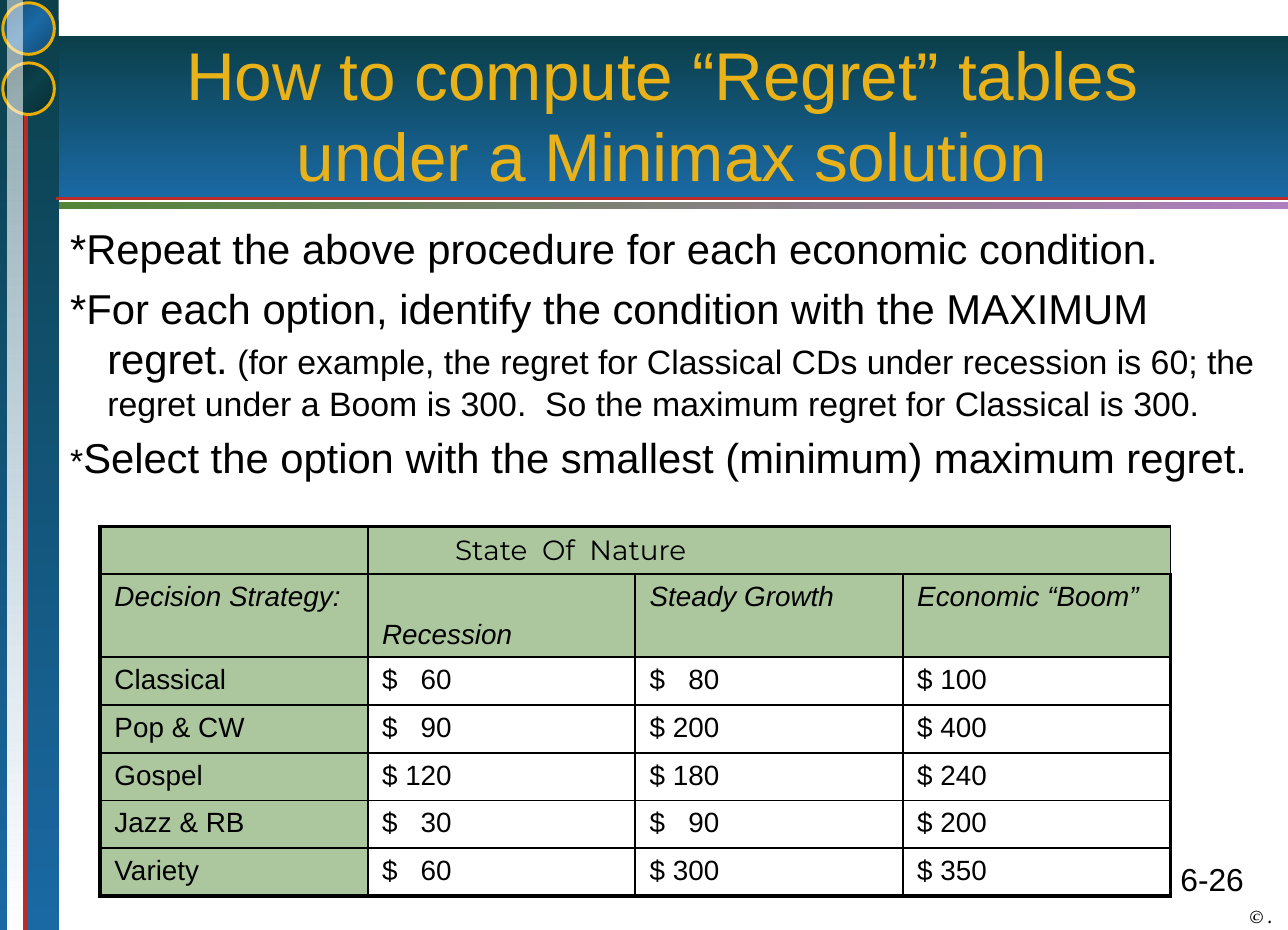
import pptx
import pptx.dml.color
import pptx.enum.shapes
import pptx.enum.text
import pptx.oxml
import pptx.oxml.ns
import pptx.util
from pptx.dml.color import RGBColor
from pptx.util import Inches

BLACK = RGBColor(0x00, 0x00, 0x00)
WHITE = RGBColor(0xFF, 0xFF, 0xFF)
TEAL = RGBColor(0x0B, 0x3F, 0x49)
DARK_TEAL = RGBColor(0x08, 0x2D, 0x34)
BLUE = RGBColor(0x1A, 0x69, 0xA4)
DARK_BLUE = RGBColor(0x13, 0x4B, 0x75)
GREEN = RGBColor(0x53, 0x84, 0x38)
PURPLE = RGBColor(0xAF, 0x7E, 0xBE)
GOLD = RGBColor(0xE8, 0xAD, 0x06)
TITLE_GOLD = RGBColor(0xE8, 0xB2, 0x18)
RED = RGBColor(0xBB, 0x2C, 0x29)
PALE_GREEN = RGBColor(0xAC, 0xC7, 0x9E)

NAMESPACE = pptx.oxml.ns.nsdecls("a")
PRESET = pptx.enum.shapes.MSO_SHAPE
ALIGN = pptx.enum.text.PP_ALIGN
ANCHOR = pptx.enum.text.MSO_ANCHOR

deck = pptx.Presentation()
deck.slide_width, deck.slide_height = Inches(9), Inches(6.5)
page = deck.slides.add_slide(deck.slide_layouts[6])


def add_gradient_shape(preset, place, colors, angle, first_alpha=100):
    """Add a shape whose gradient has evenly spaced stops; angle runs clockwise."""
    shape = page.shapes.add_shape(preset, *[Inches(value) for value in place])
    shape.shadow.inherit = False
    shape.line.fill.background()
    stops = ""
    for index, color in enumerate(colors):
        position = index * 100000 // (len(colors) - 1)
        alpha = 100 if index else first_alpha
        stops += (f'<a:gs pos="{position}"><a:srgbClr val="{color}">'
                  f'<a:alpha val="{alpha * 1000}"/></a:srgbClr></a:gs>')
    gradient = pptx.oxml.parse_xml(
        f'<a:gradFill {NAMESPACE} rotWithShape="1"><a:gsLst>{stops}</a:gsLst>'
        f'<a:lin ang="{angle * 60000}" scaled="0"/></a:gradFill>')
    shape._element.spPr.find(pptx.oxml.ns.qn("a:prstGeom")).addnext(gradient)
    return shape


def add_text(place, paragraphs, frame_format, paragraph_format, font_format):
    """Add a text box; each paragraph is a list of (text, point size) spans."""
    box = page.shapes.add_textbox(*[Inches(value) for value in place])
    for name, value in frame_format.items():
        setattr(box.text_frame, name, value)
    for index, spans in enumerate(paragraphs):
        para = box.text_frame.add_paragraph() if index else box.text_frame.paragraphs[0]
        for name, value in paragraph_format.items():
            setattr(para, name, value)
        for position, (text, size) in enumerate(spans):
            for part, line in enumerate(text.split("\n")):
                if part:
                    para.add_line_break()
                span = para.add_run()
                span.text = line
                span.font.size = pptx.util.Pt(size)
                for name, value in font_format.items():
                    if name == "color":
                        span.font.color.rgb = value
                    else:
                        setattr(span.font, name, value)
    return box


# Title band, rules and side bar
add_gradient_shape(PRESET.RECTANGLE, (0, 0.25, 9, 1.13), (TEAL, BLUE), 90)
add_gradient_shape(PRESET.RECTANGLE, (0.39, 1.41, 8.61, 0.05), (GREEN, PURPLE), 0)
add_gradient_shape(PRESET.RECTANGLE, (0, 0, 0.41, 6.5), (TEAL, BLUE), 90)
for start, end, width in [((0.39, 1.39), (9, 1.39), 1.5),
                          ((0.18, 0.79), (0.18, 6.5), 2.25)]:
    rule = page.shapes.add_connector(
        pptx.enum.shapes.MSO_CONNECTOR.STRAIGHT,
        *[Inches(value) for value in start + end])
    rule.line.color.rgb = RED
    rule.line.width = pptx.util.Pt(width)
    rule._element.spPr.append(pptx.oxml.parse_xml(f"<a:effectLst {NAMESPACE}/>"))
for top, edge, middle in [(0.44, DARK_TEAL, TEAL), (0.02, DARK_BLUE, BLUE)]:
    ring = add_gradient_shape(PRESET.OVAL, (0.02, top, 0.36, 0.36),
                              (edge, middle, edge), 45)
    ring.line.color.rgb = GOLD
    ring.line.width = pptx.util.Pt(1.5)
add_gradient_shape(PRESET.RECTANGLE, (0.05, 0, 0.11, 6.5), (WHITE, WHITE), 90, 52)

# Title, body and footer
plain = {"name": "Arial", "color": BLACK}
insets = {"word_wrap": True, "margin_left": Inches(0.09), "margin_right": Inches(0.09),
          "margin_top": Inches(0.04), "margin_bottom": Inches(0.04)}
title = add_text((0.39, 0.26, 8.61, 1.08),
                 [[("How to compute “Regret” tables \nunder a Minimax solution", 34)]],
                 {**insets, "vertical_anchor": ANCHOR.MIDDLE},
                 {"alignment": ALIGN.CENTER}, {"name": "Arial", "color": TITLE_GOLD})
for span in title.text_frame.paragraphs[0].runs:
    span.font.fill._xPr.find(pptx.oxml.ns.qn("a:solidFill")).addnext(pptx.oxml.parse_xml(
        f'<a:effectLst {NAMESPACE}><a:outerShdw dist="38100" dir="2700000">'
        f'<a:srgbClr val="{BLACK}"/></a:outerShdw></a:effectLst>'))

body = add_text((0.4, 1.52, 8.6, 2.49), [
    [("*Repeat the above procedure for each economic condition.", 21)],
    [("*For each option, identify the condition with the MAXIMUM regret.", 21),
     (" (for example, the regret for Classical CDs under recession is 60; the regret "
      "under a Boom is 300.  So the maximum regret for Classical is 300.", 17)],
    [("*", 17), ("Select the option with the smallest (minimum) maximum regret.", 21)],
], insets, {"space_before": pptx.util.Pt(4.5)}, plain)
for para in body.text_frame.paragraphs:
    properties = para._p.get_or_add_pPr()
    properties.set("marL", str(Inches(0.26)))
    properties.set("indent", str(-Inches(0.26)))

add_text((8, 5.96, 0.79, 0.37), [[("6-26", 16)]], {"word_wrap": True},
         {"alignment": ALIGN.RIGHT}, plain)
add_text((8.73, 6.33, 0.16, 0.15), [[("© .", 9)]],
         {"word_wrap": False, "vertical_anchor": ANCHOR.BOTTOM, "margin_left": 0,
          "margin_right": 0, "margin_top": 0, "margin_bottom": 0},
         {"alignment": ALIGN.RIGHT},
         {"name": "TeX Gyre Pagella", "color": BLACK, "bold": True, "italic": True})

# Regret table
rows = [
    ["", "State  Of  Nature", "", ""],
    ["Decision Strategy:", "Recession", "Steady Growth", "Economic “Boom”"],
    ["Classical", "$   60", "$   80", "$ 100"],
    ["Pop & CW", "$   90", "$ 200", "$ 400"],
    ["Gospel", "$ 120", "$ 180", "$ 240"],
    ["Jazz & RB", "$   30", "$   90", "$ 200"],
    ["Variety", "$   60", "$ 300", "$ 350"],
]
row_heights = [0.33, 0.58] + [0.32] * 5
last_row, last_column = len(rows) - 1, len(rows[0]) - 1
table = page.shapes.add_table(len(rows), len(rows[0]), Inches(0.7), Inches(3.68),
                              Inches(7.48), Inches(sum(row_heights))).table
table.first_row = table.horz_banding = False
for column in table.columns:
    column.width = Inches(1.87)
for row, height in zip(table.rows, row_heights):
    row.height = Inches(height)
table.cell(0, 1).merge(table.cell(0, last_column))

for row_index, row in enumerate(rows):
    for column_index, text in enumerate(row):
        cell = table.cell(row_index, column_index)
        if row_index < 2 or column_index == 0:
            cell.fill.solid()
            cell.fill.fore_color.rgb = PALE_GREEN
        else:
            cell.fill.background()
        outer_sides = {"L": column_index == 0, "R": column_index == last_column,
                       "T": row_index == 0, "B": row_index == last_row}
        for position, (side, outer) in enumerate(outer_sides.items()):
            width = pptx.util.Pt(2.25 if outer else 1)
            cell._tc.get_or_add_tcPr().insert(position, pptx.oxml.parse_xml(
                f'<a:ln{side} {NAMESPACE} w="{width}"><a:solidFill>'
                f'<a:srgbClr val="{BLACK}"/></a:solidFill></a:ln{side}>'))
        para = cell.text_frame.paragraphs[0]
        para.font.size = pptx.util.Pt(14)
        if text:
            span = para.add_run()
            span.text = text
            span.font.size = pptx.util.Pt(14)
            span.font.name = "Arial" if row_index else "Montserrat"
            span.font.italic = row_index == 1
            span.font.color.rgb = BLACK
table.cell(0, 1).margin_left = Inches(0.61)
table.cell(1, 1).vertical_anchor = ANCHOR.BOTTOM

deck.save("out.pptx")
